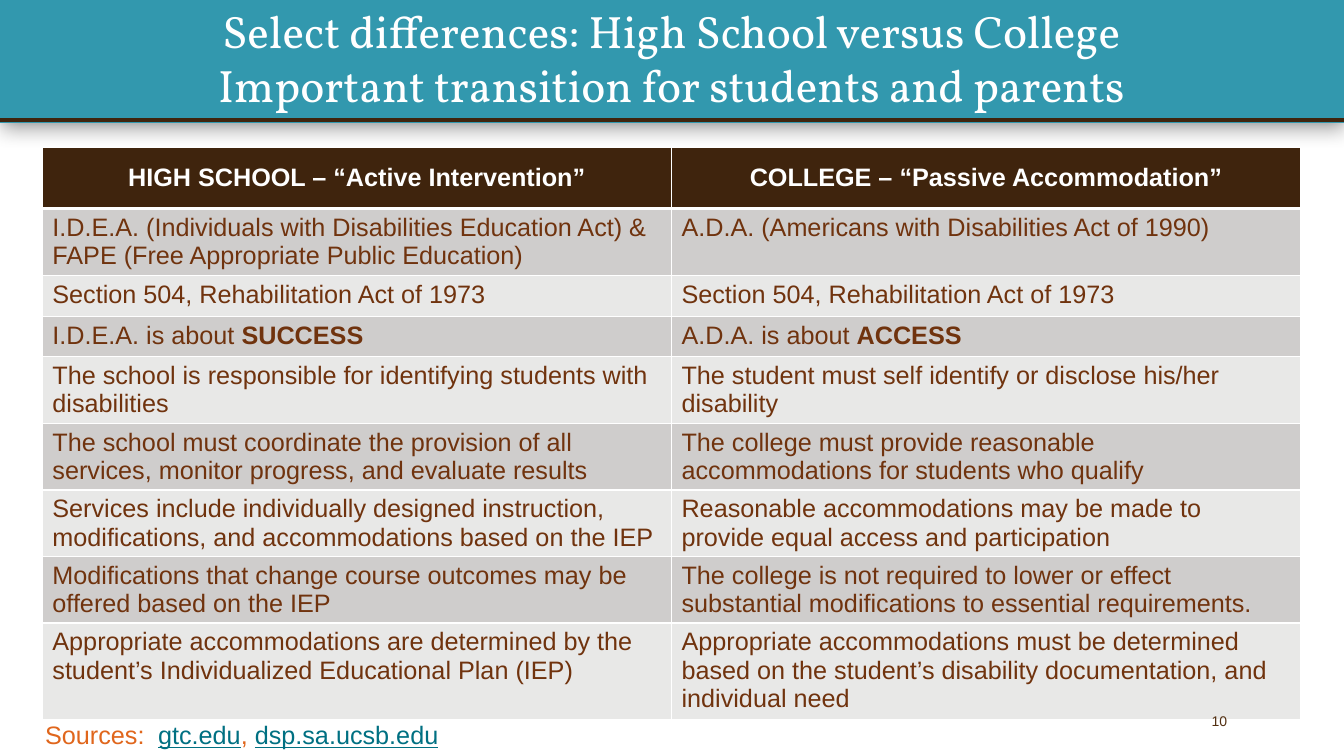
"""Build a slide comparing high school and college disability support."""
import pptx
import pptx.dml.color
import pptx.enum.shapes
import pptx.enum.text
import pptx.oxml
import pptx.oxml.ns
import pptx.util

Inches = pptx.util.Inches
Align = pptx.enum.text.PP_ALIGN
Anchor = pptx.enum.text.MSO_ANCHOR
NAMESPACE = pptx.oxml.ns.nsdecls("a")


def color(hex_value):
    return pptx.dml.color.RGBColor.from_string(hex_value)


def add_run(paragraph, text, size, hex_value, bold=False, underline=False, font="Arial"):
    run = paragraph.add_run()
    run.text = text
    run.font.name = font
    run.font.size = pptx.util.Pt(size)
    run.font.bold = bold
    run.font.underline = underline
    run.font.color.rgb = color(hex_value)


presentation = pptx.Presentation()
presentation.slide_width = Inches(13.33)
presentation.slide_height = Inches(7.5)
slide = presentation.slides.add_slide(presentation.slide_layouts[6])

band = slide.shapes.add_shape(
    pptx.enum.shapes.MSO_SHAPE.RECTANGLE, 0, 0, Inches(13.33), Inches(1.22))
band.shadow.inherit = False
band.fill.solid()
band.fill.fore_color.rgb = color("3298AE")
band.line.fill.background()
band_effects = band._element.spPr.find(pptx.oxml.ns.qn("a:effectLst"))
band_effects.append(pptx.oxml.parse_xml(
    f'<a:outerShdw {NAMESPACE} blurRad="190500" dist="38100" dir="5400000" '
    'algn="t" rotWithShape="0"><a:srgbClr val="000000"><a:alpha val="40000"/>'
    '</a:srgbClr></a:outerShdw>'))

rule = slide.shapes.add_connector(
    pptx.enum.shapes.MSO_CONNECTOR.STRAIGHT, Inches(13.33), Inches(1.19), 0, Inches(1.19))
rule.line.color.rgb = color("3F240D")
rule.line.width = pptx.util.Pt(3)
rule._element.spPr.append(pptx.oxml.parse_xml(f"<a:effectLst {NAMESPACE}/>"))

title = slide.shapes.add_textbox(Inches(0.42), Inches(0.02), Inches(12.48), Inches(1.14))
title.text_frame.word_wrap = True
title.text_frame.margin_top = 0
title.text_frame.vertical_anchor = Anchor.BOTTOM
paragraph = title.text_frame.paragraphs[0]
paragraph.alignment = Align.CENTER
add_run(paragraph, "Select differences: High School versus College", 32.4, "FFFFFF", font="Vollkorn")
paragraph.add_line_break()
add_run(paragraph, "Important transition for students and parents", 32.4, "FFFFFF", font="Vollkorn")

rows = [
    (0.61, "HIGH SCHOOL – “Active Intervention”", "COLLEGE – “Passive Accommodation”"),
    (0.66, "I.D.E.A. (Individuals with Disabilities Education Act) & FAPE (Free Appropriate Public Education)",
     "A.D.A. (Americans with Disabilities Act of 1990)"),
    (0.41, "Section 504, Rehabilitation Act of 1973",
     "Section 504, Rehabilitation Act of 1973"),
    (0.4, "I.D.E.A. is about *SUCCESS", "A.D.A. is about *ACCESS"),
    (0.66, "The school is responsible for identifying students with disabilities",
     "The student must self identify or disclose his/her disability"),
    (0.66, "The school must coordinate the provision of all services, monitor progress, and evaluate results",
     "The college must provide reasonable accommodations for students who qualify"),
    (0.66, "Services include individually designed instruction, modifications, and accommodations based on the IEP",
     "Reasonable accommodations may be made to provide equal access and participation"),
    (0.66, "Modifications that change course outcomes may be offered based on the IEP",
     "The college is not required to lower or effect substantial modifications to essential requirements."),
    (0.93, "Appropriate accommodations are determined by the student’s Individualized Educational Plan (IEP)",
     "Appropriate accommodations must be determined based on the student’s disability documentation, "
     "and individual need"),
]
table_height = sum(row[0] for row in rows)
table = slide.shapes.add_table(
    len(rows), 2, Inches(0.42), Inches(1.46), Inches(12.48), Inches(table_height)).table
for row_index, (height, *texts) in enumerate(rows):
    is_header = row_index == 0
    table.rows[row_index].height = Inches(height)
    row_fill = "3F240D" if is_header else ("E8E8E7", "CFCDCC")[row_index % 2]
    for column_index, text in enumerate(texts):
        cell = table.cell(row_index, column_index)
        for side in "LRTB":
            thick = (row_index, side) in ((0, "B"), (1, "T"))
            cell._tc.get_or_add_tcPr().append(pptx.oxml.parse_xml(
                f'<a:ln{side} {NAMESPACE} w="{pptx.util.Pt(3 if thick else 1)}"><a:solidFill>'
                f'<a:srgbClr val="FFFFFF"/></a:solidFill></a:ln{side}>'))
        cell.fill.solid()
        cell.fill.fore_color.rgb = color(row_fill)
        cell.vertical_anchor = Anchor.MIDDLE if is_header else Anchor.TOP
        cell.margin_bottom = Inches(0.05 if is_header else 0.01)
        paragraph = cell.text_frame.paragraphs[0]
        paragraph.alignment = Align.CENTER if is_header else Align.LEFT
        for part_index, part in enumerate(text.split("*")):
            add_run(paragraph, part, 18, "FFFFFF" if is_header else "70330E",
                    bold=is_header or part_index == 1)

page_number = slide.shapes.add_textbox(Inches(9.17), Inches(6.95), Inches(3), Inches(0.4))
page_number.text_frame.word_wrap = True
page_number.text_frame.margin_right = 0
page_number.text_frame.vertical_anchor = Anchor.MIDDLE
paragraph = page_number.text_frame.paragraphs[0]
paragraph.alignment = Align.RIGHT
add_run(paragraph, "10", 10, "532F11")

sources = slide.shapes.add_textbox(Inches(0.35), Inches(7.09), Inches(7.04), Inches(0.4))
sources.text_frame.word_wrap = True
paragraph = sources.text_frame.paragraphs[0]
paragraph._p.get_or_add_pPr().append(pptx.oxml.parse_xml(
    f'<a:tabLst {NAMESPACE}><a:tab pos="{Inches(1.12)}" algn="l"/></a:tabLst>'))
for text, hex_value, underline in [
        ("Sources:\t", "E0661C", False), ("gtc.edu", "007082", True),
        (", ", "E0661C", False), ("dsp.sa.ucsb.edu", "007082", True)]:
    add_run(paragraph, text, 18, hex_value, underline=underline)

presentation.save("out.pptx")
